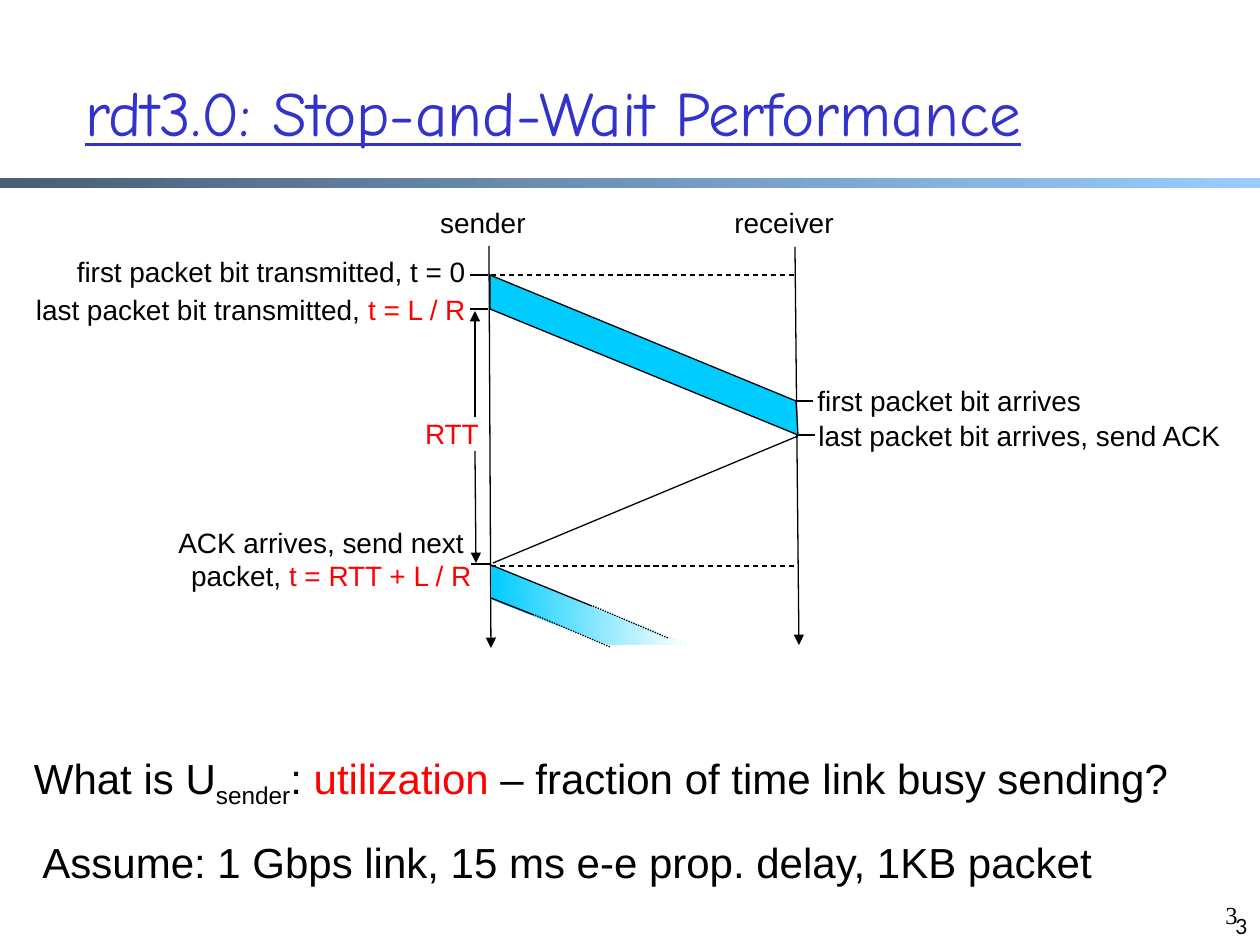
import pptx
import pptx.util
import pptx.dml.color
import pptx.enum.dml
import pptx.enum.shapes
import pptx.enum.text
import pptx.oxml
import pptx.oxml.ns
import lxml.etree

RGB = pptx.dml.color.RGBColor
BLACK = RGB(0x00, 0x00, 0x00)
WHITE = RGB(0xFF, 0xFF, 0xFF)
RED = RGB(0xFF, 0x00, 0x00)
BLUE = RGB(0x33, 0x33, 0xCC)
CYAN = RGB(0x00, 0xCC, 0xFF)
SLATE = RGB(0x47, 0x5E, 0x76)
SKY = RGB(0x99, 0xCC, 0xFF)

PX = 914400 / 126
LEFT = pptx.enum.text.PP_ALIGN.LEFT
RIGHT = pptx.enum.text.PP_ALIGN.RIGHT
TOP = pptx.enum.text.MSO_ANCHOR.TOP
MID = pptx.enum.text.MSO_ANCHOR.MIDDLE
BASE = pptx.enum.text.MSO_ANCHOR.BOTTOM
DASH = pptx.enum.dml.MSO_LINE.DASH
DOT = pptx.enum.dml.MSO_LINE.ROUND_DOT

prs = pptx.Presentation()
prs.slide_width = round(1260 * PX)
prs.slide_height = round(945 * PX)
slide = prs.slides.add_slide(prs.slide_layouts[6])
shapes = slide.shapes


def label(box, lines, size=16, font="Arial", align=LEFT, anchor=TOP):
    """Add a text box; each line is a list of (text, colour) pieces."""
    shape = shapes.add_textbox(*[round(v * PX) for v in box])
    frame = shape.text_frame
    frame.word_wrap = True
    frame.vertical_anchor = anchor
    for i, line in enumerate(lines):
        para = frame.add_paragraph() if i else frame.paragraphs[0]
        para.alignment = align
        for text, color in line:
            run = para.add_run()
            run.text = text
            run.font.size = pptx.util.Pt(size)
            run.font.name = font
            run.font.color.rgb = color
    return shape


def line(x1, y1, x2, y2, dash=None, arrow=False):
    """Add a thin black line, with an arrowhead at its end if asked."""
    ends = [round(v * PX) for v in (x1, y1, x2, y2)]
    wire = shapes.add_connector(pptx.enum.shapes.MSO_CONNECTOR.STRAIGHT, *ends)
    wire.line.color.rgb = BLACK
    wire.line.width = pptx.util.Pt(0.75)
    if dash:
        wire.line.dash_style = dash
    if arrow:
        tail = lxml.etree.SubElement(wire.line._get_or_add_ln(), pptx.oxml.ns.qn("a:tailEnd"))
        tail.set("type", "triangle")
    lxml.etree.SubElement(wire._element.spPr, pptx.oxml.ns.qn("a:effectLst"))


# Title and rule
bar = shapes.add_shape(pptx.enum.shapes.MSO_SHAPE.RECTANGLE,
                       *[round(v * PX) for v in (0, 178, 1260, 10)])
title = label((73, 32, 1123, 158), [[("rdt3.0: Stop-and-Wait Performance", BLUE)]],
              36, "Comic Neue", anchor=MID)
title.text_frame.paragraphs[0].runs[0].font.underline = True

# Labels on a white ground
for box, text in [
    ((33, 248, 445, 49), "first packet bit transmitted, t = 0"),
    ((416, 199, 122, 48), "sender"),
    ((716, 199, 130, 48), "receiver"),
]:
    tag = label(box, [[(text, BLACK)]], align=RIGHT)
    tag.fill.solid()
    tag.fill.fore_color.rgb = WHITE

# Time axes
line(489, 246, 491, 648, arrow=True)
line(795, 247, 799, 645, arrow=True)

# Start of each round
for y in (275, 566):
    line(491, y, 795, y, DASH)

# ACK and the two packets
line(493, 563, 798, 436)
bands = []
for points in [
    [(490, 275), (796, 401), (798, 435), (490, 309)],
    [(491, 566), (688, 645), (609, 645), (491, 599)],
]:
    path = shapes.build_freeform(*points[0], scale=PX)
    path.add_line_segments(points[1:], close=True)
    bands.append(path.convert_to_shape())
first, second = bands
first.fill.solid()
first.fill.fore_color.rgb = CYAN
first.line.color.rgb = BLACK
first.line.width = pptx.util.Pt(0.75)

# Fading fills
for shape, start, end in [(bar, SLATE, SKY), (second, CYAN, WHITE)]:
    shape.fill.gradient()
    shape.fill.gradient_angle = 0
    for stop, color in zip(shape.fill.gradient_stops, (start, end)):
        stop.color.rgb = color
    shape.line.fill.background()
for shape in (bar, first, second):
    shape.shadow.inherit = False

# Edges of the second packet, dotted where it fades
line(491, 565, 592, 606)
line(593, 606, 668, 638, DOT)
line(491, 598, 534, 615)
line(535, 615, 610, 647, DOT)

# Ticks
for x1, x2, y in [(488, 470, 275), (488, 470, 309), (490, 471, 564),
                  (813, 795, 401), (798, 815, 435)]:
    line(x1, y, x2, y)

# Round trip time
rtt = label((379, 410, 117, 47), [[("RTT", RED), (" ", BLACK)]], align=RIGHT)
rtt.text_frame.paragraphs[0].runs[1].font.size = pptx.util.Pt(10)
line(475, 451, 476, 563, arrow=True)
line(475, 417, 475, 311, arrow=True)

# Event labels
label((0, 286, 478, 49),
      [[("last packet bit transmitted, ", BLACK), ("t = L / R", RED)]], align=RIGHT)
label((805, 377, 334, 49), [[("first packet bit arrives", BLACK)]])
label((806, 412, 430, 78), [[("last packet bit arrives, send ACK", BLACK)]])
label((113, 519, 371, 87),
      [[("ACK arrives, send next ", BLACK)],
       [("packet, ", BLACK), ("t = RTT + L / R", RED)]], align=RIGHT)

# Question and assumption
ask = label((-42, 746, 1235, 63),
            [[("What is U", BLACK), ("sender", BLACK), (": ", BLACK),
              ("utilization", RED),
              (" – fraction of time link busy sending?", BLACK)]], 24)
ask.text_frame.margin_left = round(76 * PX)
sub = ask.text_frame.paragraphs[0].runs[1]
sub._r.get_or_add_rPr().set("baseline", "-25000")
label((30, 830, 1104, 63),
      [[("Assume: 1 Gbps link, 15 ms e-e prop. delay, 1KB packet", BLACK)]], 24)

# Page numbers
label((1192, 888, 58, 48), [[("3", BLACK)]], 14, "Times New Roman", RIGHT, BASE)
label((966, 882, 294, 63), [[("3", BLACK)]], 12, "Lato", RIGHT, BASE)

prs.save("out.pptx")
